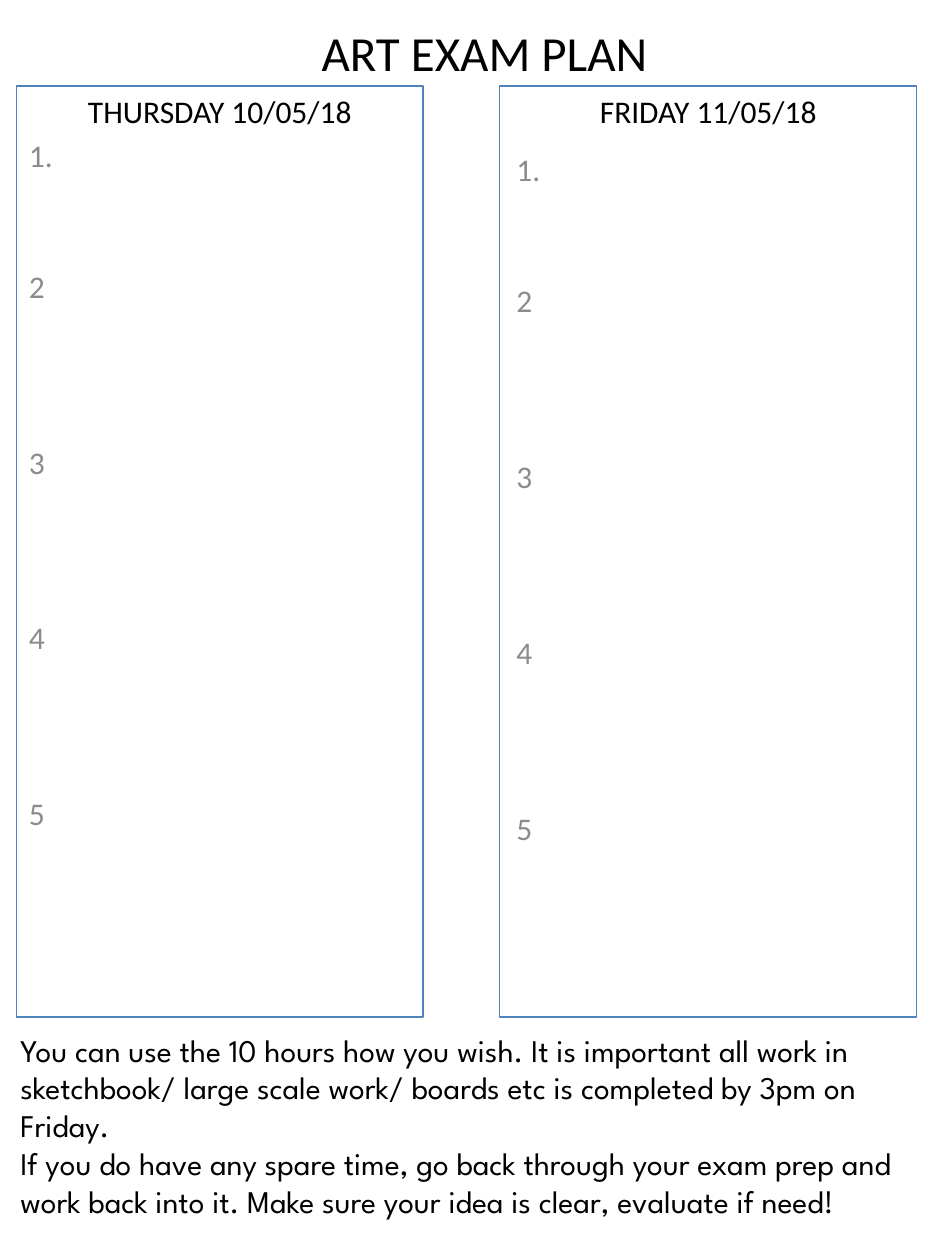
from pptx import Presentation
from pptx.dml.color import RGBColor
from pptx.enum.shapes import MSO_SHAPE
from pptx.enum.text import MSO_ANCHOR, PP_ALIGN
from pptx.util import Pt

RECTANGLE = MSO_SHAPE.RECTANGLE
TOP, MIDDLE = MSO_ANCHOR.TOP, MSO_ANCHOR.MIDDLE
LEFT, CENTER = PP_ALIGN.LEFT, PP_ALIGN.CENTER

BLACK = RGBColor(0x00, 0x00, 0x00)
GREY = RGBColor(0x8C, 0x8C, 0x8C)
BLUE = RGBColor(0x4F, 0x81, 0xBD)

# Each session number with the space above it, leaving room for the plan
SESSIONS = [("1.", 3.2), ("2", 53.5), ("3", 78.8), ("4", 78.8), ("5", 78.8)]


class PlanPage:
    heading_font = "Calibri"
    note_font = "League Spartan"
    body_size = 18

    def __init__(self, slide):
        self.slide = slide

    def set_text(self, paragraph, text, font, size, color, align=LEFT, before=0):
        paragraph.text = text
        paragraph.alignment = align
        paragraph.space_before = Pt(before)
        for run in paragraph.runs:
            run.font.name = font
            run.font.size = Pt(size)
            run.font.color.rgb = color

    def text_box(self, left, top, width, height, anchor=TOP):
        box = self.slide.shapes.add_textbox(Pt(left), Pt(top), Pt(width), Pt(height))
        frame = box.text_frame
        frame.word_wrap = True
        frame.vertical_anchor = anchor
        return frame

    def title(self, text, left, top, width, height):
        frame = self.text_box(left, top, width, height, MIDDLE)
        self.set_text(frame.paragraphs[0], text, self.heading_font, 28, BLACK, CENTER)

    def day_panel(self, day, left, top, width, height):
        panel = self.slide.shapes.add_shape(
            RECTANGLE, Pt(left), Pt(top), Pt(width), Pt(height))
        panel.shadow.inherit = False
        panel.fill.background()
        panel.line.color.rgb = BLUE
        panel.line.width = Pt(0.75)
        frame = panel.text_frame
        frame.word_wrap = True
        frame.vertical_anchor = TOP
        self.set_text(frame.paragraphs[0], day, self.heading_font,
                      self.body_size, BLACK, CENTER)
        return frame

    def sessions(self, frame):
        for number, before in SESSIONS:
            first = not frame.paragraphs[0].runs
            paragraph = frame.paragraphs[0] if first else frame.add_paragraph()
            self.set_text(paragraph, number, self.heading_font, self.body_size,
                          GREY, before=0 if first else before)

    def notes(self, sentences, left, top, width, height):
        frame = self.text_box(left, top, width, height)
        for index, sentence in enumerate(sentences):
            paragraph = frame.add_paragraph() if index else frame.paragraphs[0]
            self.set_text(paragraph, sentence, self.note_font, self.body_size, BLACK)


def main():
    presentation = Presentation()
    presentation.slide_width = Pt(540)
    presentation.slide_height = Pt(720)
    page = PlanPage(presentation.slides.add_slide(presentation.slide_layouts[6]))

    # Title
    page.title("ART EXAM PLAN", 19.4, 0, 514.8, 59)

    # Thursday: heading and sessions share the panel
    thursday = page.day_panel("THURSDAY 10/05/18", 9.4, 49.2, 232.4, 532)
    page.sessions(thursday)

    # Friday: sessions sit in their own box over the panel
    page.day_panel("FRIDAY 11/05/18", 285.6, 49.2, 238.3, 532)
    friday = page.text_box(288, 82.2, 270, 422)
    page.sessions(friday)

    # Instructions
    page.notes([
        "You can use the 10 hours how you wish. It is important all work in "
        "sketchbook/ large scale work/ boards etc is completed by 3pm on Friday.",
        "If you do have any spare time, go back through your exam prep and work "
        "back into it. Make sure your idea is clear, evaluate if need!",
    ], 4.5, 585.4, 519, 138)

    presentation.save("out.pptx")


if __name__ == "__main__":
    main()
